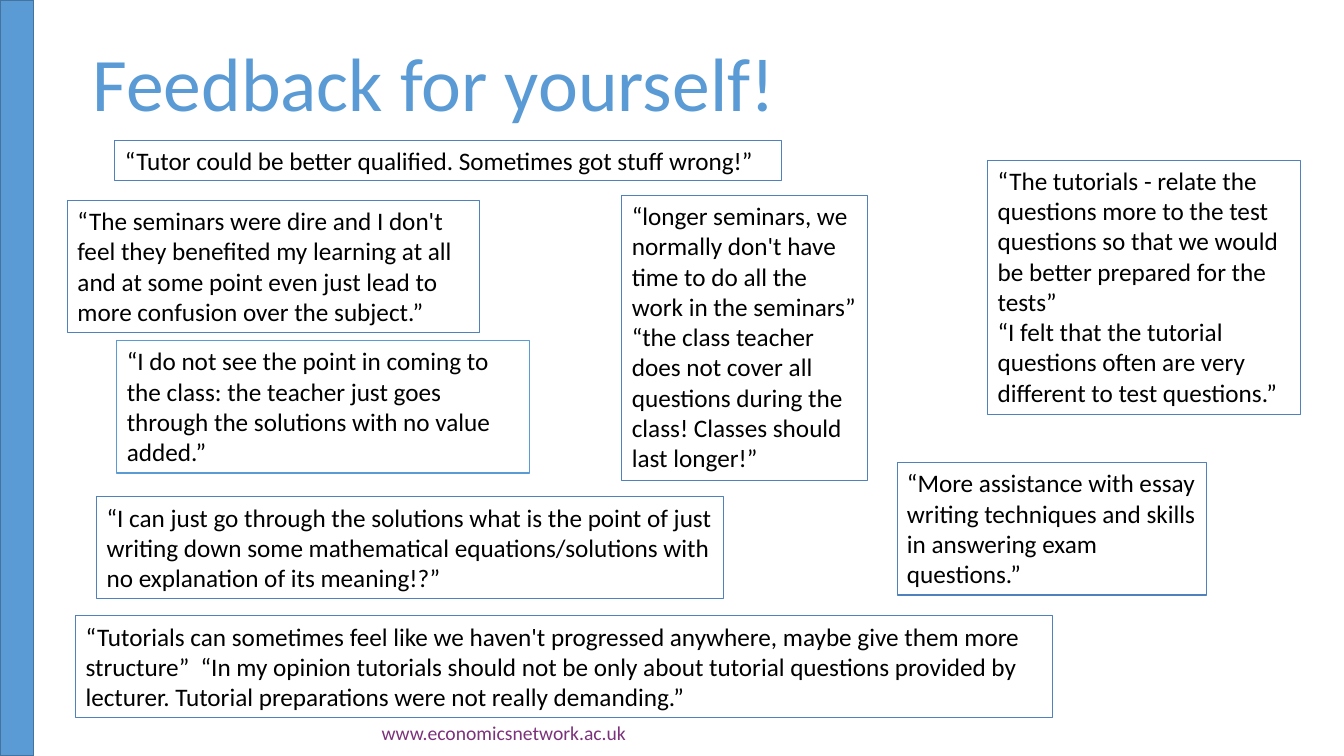
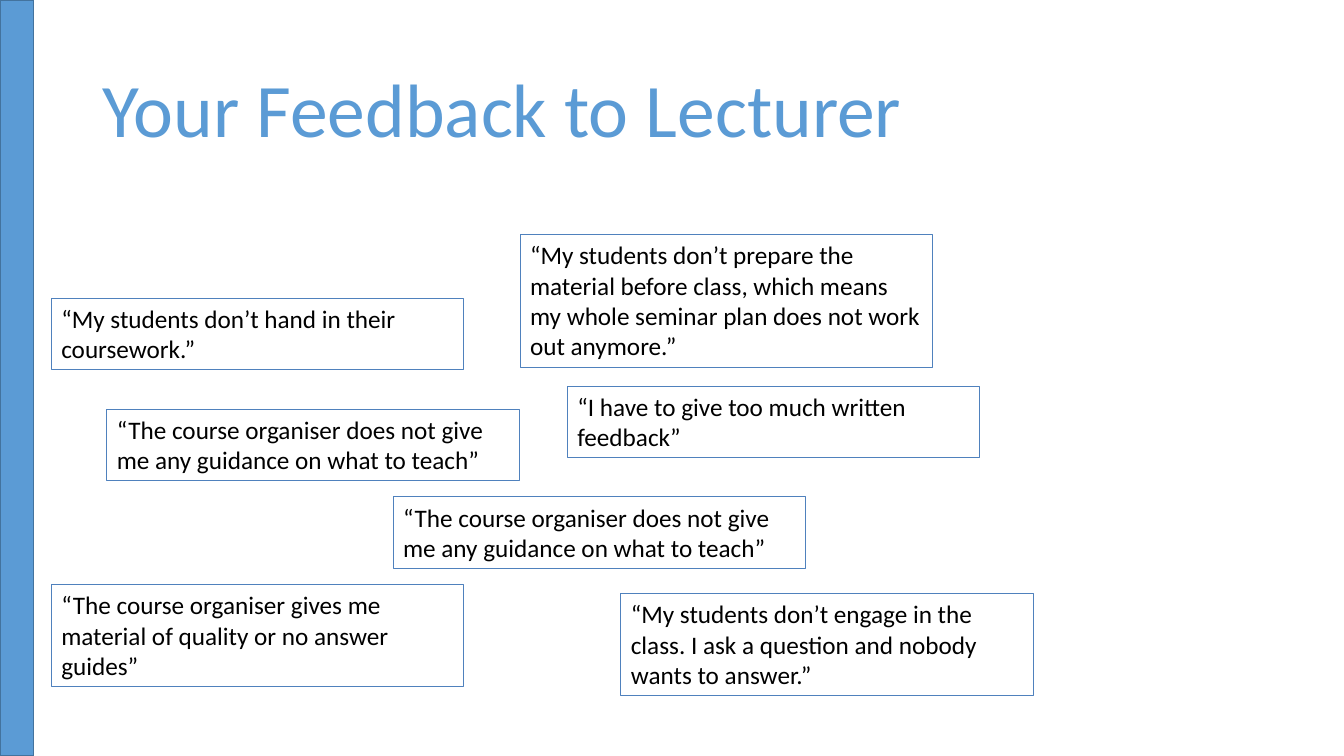
import pptx
import pptx.dml.color
import pptx.enum.shapes
import pptx.enum.text
import pptx.util

COLOURS = {
    "accent": "5B9BD5",
    "band edge": "43739E",
    "quote edge": "4F81BD",
    "text": "000000",
    "footer": "7C327B",
}
FONT = "Calibri"
COLUMNS, ROWS = 80, 45
CELL = pptx.util.Inches(7.5) // ROWS
LINE_ROWS, PADDING_ROWS = 1.82, 0.6
STANDARD_WIDTH = 24.54

GUIDANCE = ["“The course organiser does not give", "me any guidance on what to teach”"]

STUDENT_QUOTES = [
    (6.84, 8.34, 39.66, 1, ["“Tutor could be better qualified. Sometimes got stuff wrong!”"]),
    (4.02, 11.94, STANDARD_WIDTH, 4, [
        "“The seminars were dire and I don't feel they benefited my learning at all "
        "and at some point even just lead to more confusion over the subject.”"]),
    (58.8, 9.54, 18.6, 8, [
        "“The tutorials - relate the questions more to the test questions "
        "so that we would be better prepared for the tests”",
        "“I felt that the tutorial questions often are very different to test questions.”"]),
    (37.02, 11.64, 14.64, 9, [
        "“longer seminars, we normally don't have time to do all the work in the seminars”",
        "“the class teacher does not cover all questions during the class! "
        "Classes should last longer!”"]),
    (53.4, 27.54, 18.42, 4, [
        "“More assistance with essay writing techniques and skills "
        "in answering exam questions.”"]),
    (4.5, 36.66, 58.14, 3, [
        "“Tutorials can sometimes feel like we haven't progressed anywhere, "
        "maybe give them more structure”  “In my opinion tutorials should not be only "
        "about tutorial questions provided by lecturer. "
        "Tutorial preparations were not really demanding.”"]),
    (6.96, 20.28, STANDARD_WIDTH, 4, [
        "“I do not see the point in coming to the class: the teacher just goes "
        "through the solutions with no value added.”"], "accent"),
    (5.76, 29.58, 37.32, 3, [
        "“I can just go through the solutions what is the point of just writing down "
        "some mathematical equations/solutions with no explanation of its meaning!?”"]),
]

TUTOR_QUOTES = [
    (36.96, 35.34, STANDARD_WIDTH, 3, [
        "“My students don’t engage in the class. "
        "I ask a question and nobody wants to answer.”"]),
    (30.96, 13.98, STANDARD_WIDTH, 4, [
        "“My students don’t prepare the material before class, "
        "which means my whole seminar plan does not work out anymore.”"]),
    (3.06, 17.76, STANDARD_WIDTH, 2, ["“My students don’t hand in their\ncoursework.”"]),
    (33.78, 22.98, STANDARD_WIDTH, 2, ["“I have to give too much written feedback”"]),
    (6.36, 24.36, STANDARD_WIDTH, 2, GUIDANCE),
    (23.4, 29.58, STANDARD_WIDTH, 2, GUIDANCE),
    (3.06, 34.8, STANDARD_WIDTH, 3, [
        "“The course organiser gives me material of quality or no answer guides”"]),
]


def colour(name):
    """Return the named colour."""
    return pptx.dml.color.RGBColor.from_string(COLOURS[name])


def place(*cells):
    """Turn columns and rows of the grid into lengths."""
    return [round(cell * CELL) for cell in cells]


def write(box, paragraphs, size, tint, align="LEFT", anchor="TOP", spacing=1.0):
    """Write paragraphs into a box, one run per line."""
    frame = box.text_frame
    frame.word_wrap = True
    frame.vertical_anchor = pptx.enum.text.MSO_ANCHOR[anchor]
    for index, words in enumerate(paragraphs):
        para = frame.add_paragraph() if index else frame.paragraphs[0]
        para.alignment = pptx.enum.text.PP_ALIGN[align]
        para.line_spacing = spacing
        for number, line in enumerate(words.split("\n")):
            if number:
                para.add_line_break()
            span = para.add_run()
            span.text = line
            span.font.name = FONT
            span.font.size = pptx.util.Pt(size)
            span.font.color.rgb = colour(tint)


def add_rectangle(page, left, top, width, height, edge, weight, fill=None):
    """Add an outlined rectangle, filled if a fill is named."""
    box = page.shapes.add_shape(
        pptx.enum.shapes.MSO_SHAPE.RECTANGLE, *place(left, top, width, height))
    box.shadow.inherit = False
    box.line.color.rgb = colour(edge)
    box.line.width = pptx.util.Pt(weight)
    if fill:
        box.fill.solid()
        box.fill.fore_color.rgb = colour(fill)
    else:
        box.fill.background()
    return box


def add_quote(page, left, top, width, lines, paragraphs, edge="quote edge"):
    """Add a framed quotation as high as its lines of text."""
    height = PADDING_ROWS + lines * LINE_ROWS
    box = add_rectangle(page, left, top, width, height, edge, 0.75)
    write(box, paragraphs, 18, "text")
    box.text_frame.auto_size = pptx.enum.text.MSO_AUTO_SIZE.SHAPE_TO_FIT_TEXT


def add_title(page, left, top, words):
    """Add the slide title."""
    box = page.shapes.add_textbox(*place(left, top, 69, 8.7))
    write(box, [words], 54, "accent", anchor="MIDDLE", spacing=0.9)


def add_footer(page, words):
    """Add the centred web address at the foot of the slide."""
    box = page.shapes.add_textbox(*place(0, 42.6, 60, 2.04))
    write(box, [words], 14, "footer", align="CENTER")


def add_page(deck, title, left, top):
    """Add a blank slide with the side band and a title."""
    page = deck.slides.add_slide(deck.slide_layouts[6])
    add_rectangle(page, 0, 0, 2, ROWS, "band edge", 1, "accent")
    add_title(page, left, top, title)
    return page


def main():
    """Build and save the deck."""
    deck = pptx.Presentation()
    deck.slide_width, deck.slide_height = place(COLUMNS, ROWS)

    page = add_page(deck, "Feedback for yourself!", 4.92, 0.84)
    add_footer(page, "www.economicsnetwork.ac.uk")
    for quote in STUDENT_QUOTES:
        add_quote(page, *quote)

    page = add_page(deck, "Your Feedback to Lecturer", 5.52, 2.4)
    for quote in TUTOR_QUOTES:
        add_quote(page, *quote)

    deck.save("out.pptx")


if __name__ == "__main__":
    main()
